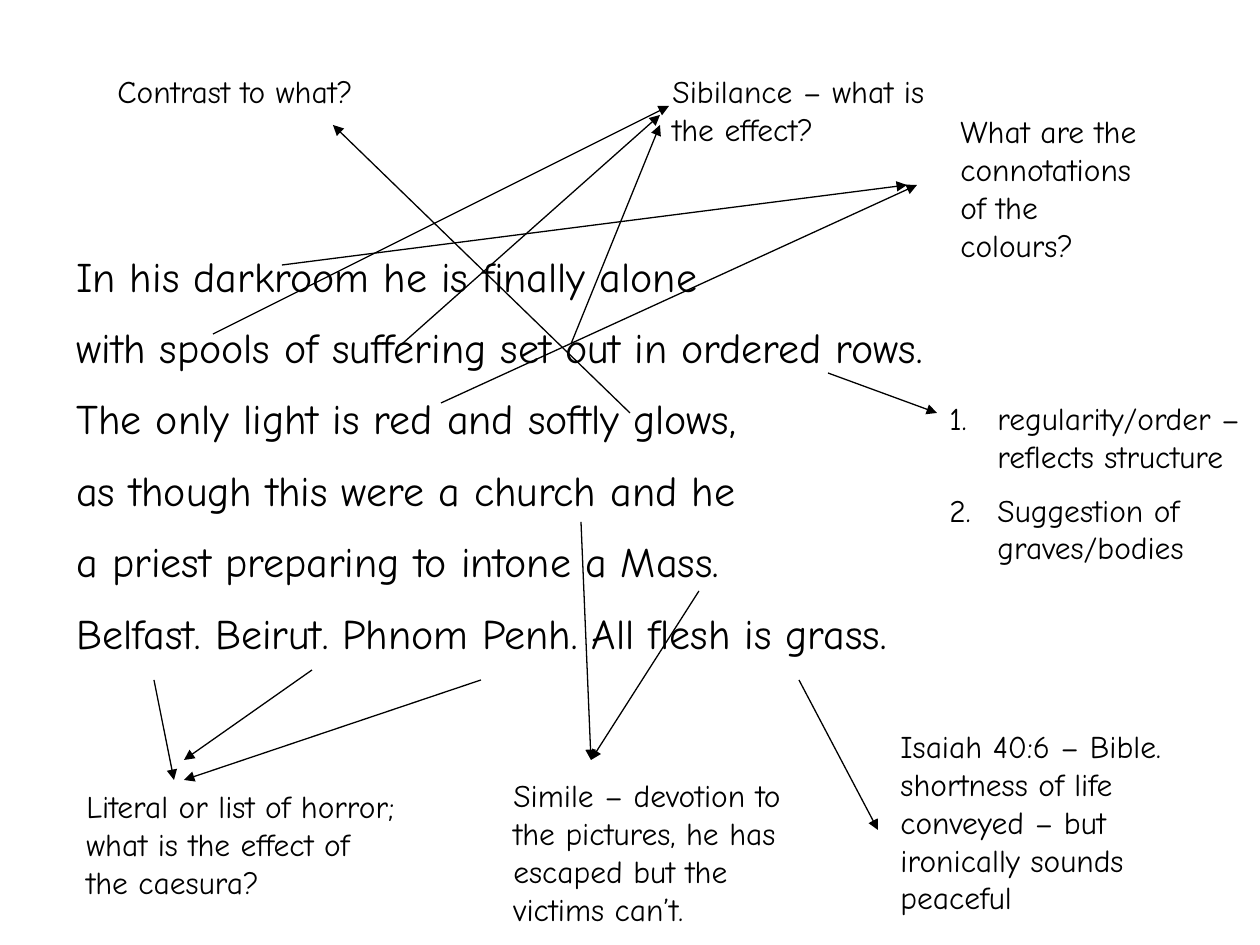
from dataclasses import dataclass

from lxml.etree import SubElement
from pptx import Presentation
from pptx.dml.color import RGBColor
from pptx.enum.shapes import MSO_CONNECTOR
from pptx.enum.text import MSO_AUTO_SIZE
from pptx.oxml.ns import qn
from pptx.slide import Slide
from pptx.util import Emu, Pt

PIXELS_PER_INCH = 126
FONT = "Comic Neue"
COLOURS = {"ink": "000000"}


@dataclass(frozen=True)
class Note:
    left: int
    top: int
    width: int
    height: int
    lines: tuple[str, ...]
    size: int = 18
    numbered: bool = False
    wrap: bool = True


@dataclass(frozen=True)
class Arrow:
    start: tuple[int, int]
    end: tuple[int, int]


POEM = Note(64, 244, 1081, 522, (
    "In his darkroom he is finally alone",
    "with spools of suffering set out in ordered rows.",
    "The only light is red and softly glows,",
    "as though this were a church and he",
    "a priest preparing to intone a Mass.",
    "Belfast. Beirut. Phnom Penh. All flesh is grass.",
), size=24)

ANNOTATIONS = (
    Note(105, 66, 291, 50, ("Contrast to what?",), wrap=False),
    Note(660, 66, 297, 88, ("Sibilance – what is the effect?",)),
    Note(948, 106, 218, 202, ("What are the connotations of the colours?",)),
    Note(937, 393, 323, 221, ("regularity/order – reflects structure",
                              "Suggestion of graves/bodies"), numbered=True),
    Note(74, 781, 338, 165,
         ("Literal or list of horror; what is the effect of the caesura?",)),
    Note(501, 770, 318, 165,
         ("Simile – devotion to the pictures, he has escaped but the victims can’t.",)),
    Note(888, 721, 348, 204,
         ("Isaiah 40:6 – Bible. shortness of life conveyed – but ironically sounds peaceful",)),
)

ARROWS = (
    # Sibilance
    Arrow((213, 334), (669, 106)),
    Arrow((402, 344), (660, 115)),
    Arrow((571, 344), (660, 125)),
    # Colours
    Arrow((441, 403), (917, 185)),
    Arrow((282, 265), (907, 185)),
    # Contrast and order
    Arrow((630, 413), (333, 125)),
    Arrow((828, 373), (937, 413)),
    # List of places
    Arrow((154, 680), (174, 780)),
    Arrow((312, 670), (184, 760)),
    Arrow((481, 680), (184, 780)),
    # Simile
    Arrow((581, 522), (591, 760)),
    Arrow((699, 591), (591, 760)),
    # Bible reference
    Arrow((799, 680), (878, 830)),
)


def px(length: int) -> Emu:
    return Emu(round(length * 914400 / PIXELS_PER_INCH))


def colour(name: str) -> RGBColor:
    return RGBColor.from_string(COLOURS[name])


def write_text(para, text: str, *, size: int, ink: str = "ink",
               space_before: float = 0, numbered: bool = False) -> None:
    para.space_before = Pt(space_before)
    span = para.add_run()
    span.text = text
    span.font.name = FONT
    span.font.size = Pt(size)
    span.font.color.rgb = colour(ink)
    if numbered:
        properties = para._p.get_or_add_pPr()
        properties.set("marL", str(px(48)))
        properties.set("indent", str(-px(48)))
        SubElement(properties, qn("a:buFont"), typeface=FONT)
        SubElement(properties, qn("a:buAutoNum"), type="arabicPeriod")


def draw_note(page: Slide, note: Note) -> None:
    box = page.shapes.add_textbox(px(note.left), px(note.top),
                                  px(note.width), px(note.height))
    frame = box.text_frame
    frame.word_wrap = note.wrap
    frame.auto_size = MSO_AUTO_SIZE.SHAPE_TO_FIT_TEXT
    for index, line in enumerate(note.lines):
        para = frame.add_paragraph() if index else frame.paragraphs[0]
        write_text(para, line, size=note.size, numbered=note.numbered,
                   space_before=note.size / 2 if index else 0)


def draw_arrow(page: Slide, arrow: Arrow) -> None:
    connector = page.shapes.add_connector(
        MSO_CONNECTOR.STRAIGHT, *map(px, arrow.start + arrow.end))
    connector.line.color.rgb = colour("ink")
    connector.line.width = Pt(0.75)
    SubElement(connector.line._get_or_add_ln(), qn("a:tailEnd"), type="triangle")
    SubElement(connector._element.spPr, qn("a:effectLst"))


def main() -> None:
    deck = Presentation()
    deck.slide_width, deck.slide_height = px(1260), px(945)
    page = deck.slides.add_slide(deck.slide_layouts[6])

    # Poem with its annotations
    for note in (POEM, *ANNOTATIONS):
        draw_note(page, note)

    # Links from the words to the annotations
    for arrow in ARROWS:
        draw_arrow(page, arrow)

    deck.save("out.pptx")


if __name__ == "__main__":
    main()
